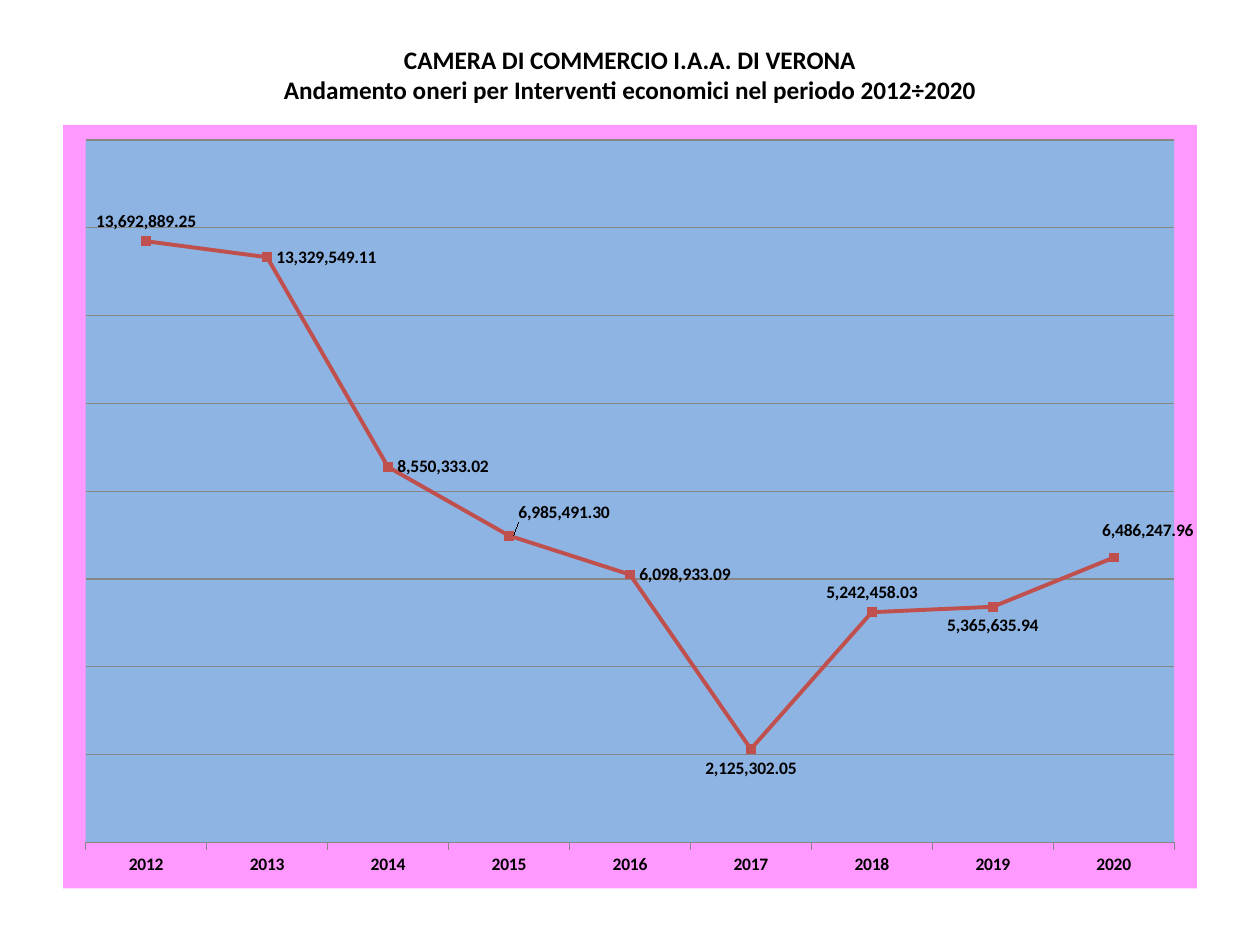
"""Build a slide with a line chart of spending on economic initiatives, 2012-2020."""
import copy

import pptx
import pptx.chart.data
import pptx.dml.color
import pptx.enum.chart
import pptx.enum.text
import pptx.oxml
import pptx.oxml.ns
import pptx.util
from pptx.util import Inches

BLACK = pptx.dml.color.RGBColor(0x00, 0x00, 0x00)
PINK = pptx.dml.color.RGBColor(0xFF, 0x99, 0xFF)
BLUE = pptx.dml.color.RGBColor(0x8E, 0xB4, 0xE3)
RED = pptx.dml.color.RGBColor(0xC0, 0x50, 0x4D)
GREY = pptx.dml.color.RGBColor(0x86, 0x86, 0x86)

TITLE = "CAMERA DI COMMERCIO I.A.A. DI VERONA\vAndamento oneri per Interventi economici nel periodo 2012÷2020"
VALUES = [13692889.25, 13329549.11, 8550333.02, 6985491.30, 6098933.09,
          2125302.05, 5242458.03, 5365635.94, 6486247.96]
NUMBER_FORMAT = "#,##0.00"
POS = pptx.enum.chart.XL_LABEL_POSITION
POSITIONS = {0: POS.ABOVE, 3: POS.RIGHT, 5: POS.BELOW, 6: POS.ABOVE, 7: POS.BELOW, 8: POS.ABOVE}
OFFSETS = {3: (0, -0.03), 8: (0.03, -0.01)}
LABEL_FONT = {"name": "Calibri", "size": pptx.util.Pt(10), "bold": True}
TITLE_FONT = {"name": "Calibri", "size": pptx.util.Pt(14.4), "bold": True}


def set_font(font, values):
    for name, value in values.items():
        setattr(font, name, value)
    font.color.rgb = BLACK


def manual_layout(**values):
    items = "".join(f'<c:{name} val="{value}"/>' for name, value in values.items())
    return pptx.oxml.parse_xml(
        f'<c:layout {pptx.oxml.ns.nsdecls("c")}><c:manualLayout>{items}</c:manualLayout></c:layout>')


prs = pptx.Presentation()
prs.slide_width, prs.slide_height = Inches(10), Inches(7.5)
s = prs.slides.add_slide(prs.slide_layouts[5])

sp = s.shapes.title
sp.left, sp.top, sp.width, sp.height = Inches(0.5), Inches(0.3), Inches(9), Inches(1.25)
tf = sp.text_frame
tf.text = TITLE
tf.auto_size = pptx.enum.text.MSO_AUTO_SIZE.NONE
tf.vertical_anchor = pptx.enum.text.MSO_ANCHOR.TOP
p = tf.paragraphs[0]
p.alignment = pptx.enum.text.PP_ALIGN.CENTER
for r in p.runs:
    set_font(r.font, TITLE_FONT)
for br in p._p.findall(pptx.oxml.ns.qn("a:br")):
    br.append(copy.deepcopy(p.runs[0]._r.rPr))

data = pptx.chart.data.CategoryChartData(number_format=NUMBER_FORMAT)
data.categories = [str(year) for year in range(2012, 2021)]
data.add_series("Series 1", VALUES)
chart = s.shapes.add_chart(pptx.enum.chart.XL_CHART_TYPE.LINE_MARKERS,
                           Inches(0.5), Inches(0.99), Inches(9), Inches(6.06), data).chart
chart.has_title = False
chart.has_legend = False
set_font(chart.font, LABEL_FONT)

area = chart._chartSpace.chart.plotArea
for old in area.findall(pptx.oxml.ns.qn("c:layout")):
    area.remove(old)
area.insert(0, manual_layout(layoutTarget="inner", xMode="edge", yMode="edge",
                             x=0.02, y=0.02, w=0.96, h=0.92))
for parent, color, index in ((area, BLUE, len(area)),
                             (chart._chartSpace, PINK, chart._chartSpace.index(chart._chartSpace.chart) + 1)):
    parent.insert(index, pptx.oxml.parse_xml(
        f'<c:spPr {pptx.oxml.ns.nsdecls("c", "a")}><a:solidFill><a:srgbClr val="{color}"/></a:solidFill>'
        '<a:ln><a:noFill/></a:ln></c:spPr>'))

axis = chart.value_axis
axis.minimum_scale, axis.maximum_scale, axis.major_unit = 0, 16000000, 2000000
axis.has_major_gridlines = True
axis.visible = False
chart.category_axis.major_tick_mark = pptx.enum.chart.XL_TICK_MARK.OUTSIDE
set_font(chart.category_axis.tick_labels.font, LABEL_FONT)
for line in (axis.major_gridlines.format.line, chart.category_axis.format.line):
    line.color.rgb = GREY
    line.width = pptx.util.Pt(0.75)

plot = chart.plots[0]
plot.vary_by_categories = False
series = plot.series[0]
series.smooth = False
series.format.line.color.rgb = RED
series.format.line.width = pptx.util.Pt(2.25)
series.marker.style = pptx.enum.chart.XL_MARKER_STYLE.SQUARE
series.marker.size = 5
series.marker.format.fill.solid()
series.marker.format.fill.fore_color.rgb = RED
series.marker.format.line.color.rgb = RED

labels = series.data_labels
labels.show_value = True
labels.position = POS.RIGHT
labels.number_format = NUMBER_FORMAT
labels.number_format_is_linked = False
set_font(labels.font, LABEL_FONT)
for i, position in POSITIONS.items():
    label = series.points[i].data_label
    label.position = position
    set_font(label.font, LABEL_FONT)
    if i in OFFSETS:
        x, y = OFFSETS[i]
        label._get_or_add_dLbl().insert(1, manual_layout(x=x, y=y))

prs.save("out.pptx")
